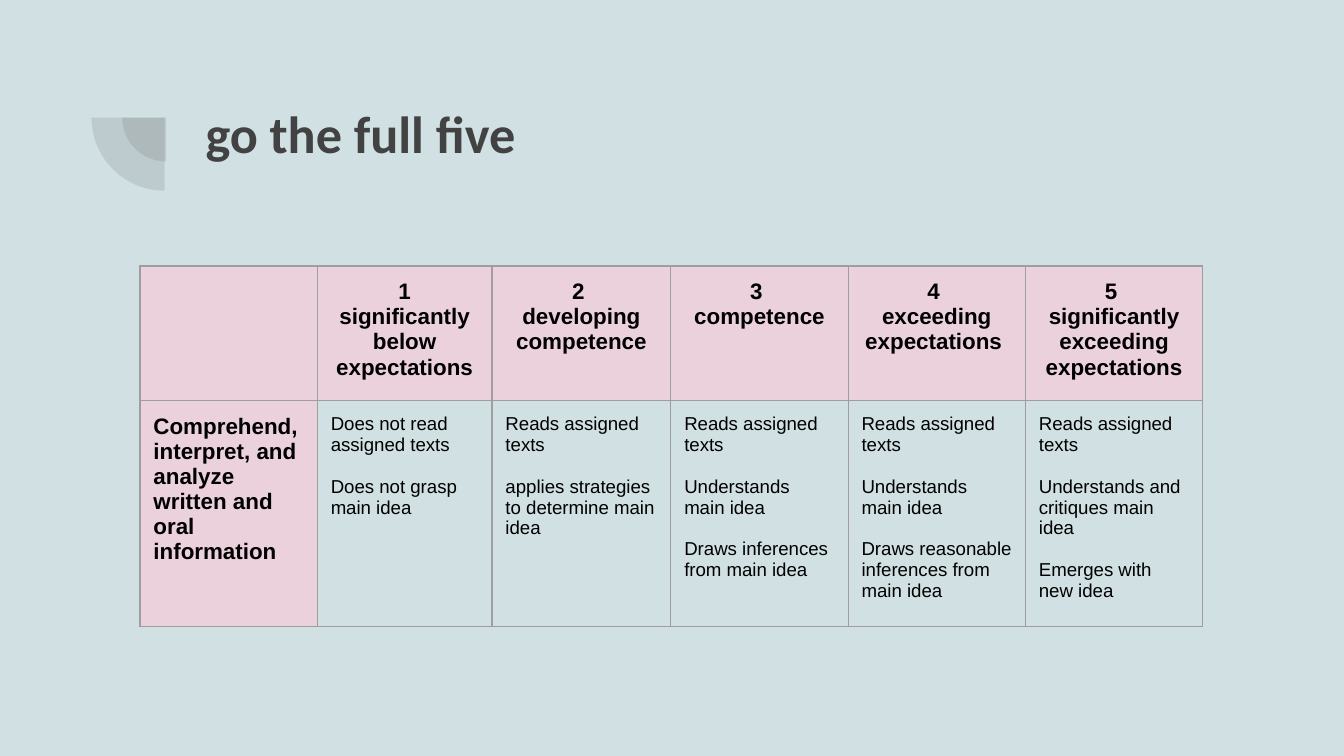
from lxml import etree
from pptx import Presentation
from pptx.dml.color import RGBColor
from pptx.enum.shapes import MSO_SHAPE
from pptx.enum.text import PP_ALIGN
from pptx.oxml.ns import qn
from pptx.util import Pt

PIE = MSO_SHAPE.PIE
LEFT, MID = PP_ALIGN.LEFT, PP_ALIGN.CENTER

GRAY, PINK = "424242", "EAD1DC"
PAD = 7.2
WIDTHS = [95, 93.6, 95.8, 95, 95, 95]
HEIGHTS = [68, 114.5]
HEADS = [
    [],
    ["1", "significantly below expectations"],
    ["2 ", "developing competence"],
    ["3 ", "competence"],
    ["4 ", "exceeding", "expectations "],
    ["5 ", "significantly exceeding expectations"],
]
SKILL = ["Comprehend, interpret, and analyze written and oral information"]
LEVELS = [
    ["Does not read assigned texts", "Does not grasp main idea"],
    ["Reads assigned texts", "applies strategies to determine main idea"],
    ["Reads assigned texts", "Understands main idea",
     "Draws inferences from main idea"],
    ["Reads assigned texts", "Understands main idea",
     "Draws reasonable inferences from main idea"],
    ["Reads assigned texts", "Understands and critiques main idea",
     "Emerges with new idea"],
]


def color(code):
    return RGBColor.from_string(code)


def write(frame, lines, size=12, font="Arial", tint="000000", bold=True,
          align=LEFT, gap=0):
    frame.word_wrap = True
    for i, line in enumerate(lines):
        para = frame.add_paragraph() if i else frame.paragraphs[0]
        para.alignment = align
        para.space_before = Pt(gap if i else 0)
        run = para.add_run()
        run.text = line
        run.font.size = Pt(size)
        run.font.name = font
        run.font.bold = bold
        run.font.color.rgb = color(tint)


class Deck:
    """Holds the style and the current slide, and draws each kind of element."""

    def __init__(self, back, edge):
        self.file = Presentation()
        self.file.slide_width, self.file.slide_height = Pt(720), Pt(405)
        self.slide = self.file.slides.add_slide(self.file.slide_layouts[6])
        self.edge = edge
        fill = self.slide.background.fill
        fill.solid()
        fill.fore_color.rgb = color(back)

    def pie(self, x, y, size, tint, alpha):
        shape = self.slide.shapes.add_shape(PIE, Pt(x), Pt(y), Pt(size), Pt(size))
        shape.adjustments[0], shape.adjustments[1] = 108, 162
        shape.rotation = 270
        shape.shadow.inherit = False
        shape.line.fill.background()
        shape.fill.solid()
        shape.fill.fore_color.rgb = color(tint)
        tone = shape.fill._xPr.find(qn("a:solidFill"))[0]
        etree.SubElement(tone, qn("a:alpha"), val=str(alpha * 1000))

    def text(self, x, y, w, h, lines, **style):
        frame = self.slide.shapes.add_textbox(Pt(x), Pt(y), Pt(w), Pt(h)).text_frame
        frame.margin_left = frame.margin_right = Pt(PAD)
        frame.margin_top = frame.margin_bottom = Pt(PAD)
        write(frame, lines, **style)

    def grid(self, x, y, widths, heights):
        table = self.slide.shapes.add_table(
            len(heights), len(widths), Pt(x), Pt(y),
            Pt(sum(widths)), Pt(sum(heights))).table
        table.first_row = table.horz_banding = False
        for col, w in zip(table.columns, widths):
            col.width = Pt(w)
        for row, h in zip(table.rows, heights):
            row.height = Pt(h)
        return table

    def cell(self, cell, lines, fill=None, **style):
        cell.margin_left = cell.margin_right = Pt(PAD)
        cell.margin_top = cell.margin_bottom = Pt(PAD)
        props = cell._tc.get_or_add_tcPr()
        for side in "LRTB":
            line = etree.SubElement(props, qn("a:ln" + side), w=str(Pt(0.75)))
            solid = etree.SubElement(line, qn("a:solidFill"))
            etree.SubElement(solid, qn("a:srgbClr"), val=self.edge)
        if fill:
            cell.fill.solid()
            cell.fill.fore_color.rgb = color(fill)
        else:
            cell.fill.background()
        write(cell.text_frame, lines, **style)


def main():
    deck = Deck(back="D0E0E3", edge="9E9E9E")
    deck.pie(65.5, 39.5, 47, GRAY, 13)
    deck.pie(49, 23.7, 78.5, GRAY, 13)
    deck.text(103, 46.8, 553.7, 49, ["go the full five"],
              size=28, font="Calibri", tint=GRAY)
    table = deck.grid(75, 142.5, WIDTHS, HEIGHTS)
    for i, lines in enumerate(HEADS):
        deck.cell(table.cell(0, i), lines, PINK, align=MID)
    deck.cell(table.cell(1, 0), SKILL, PINK)
    for i, lines in enumerate(LEVELS, 1):
        deck.cell(table.cell(1, i), lines, size=10, bold=False, gap=11.2)
    deck.file.save("out.pptx")


if __name__ == "__main__":
    main()
